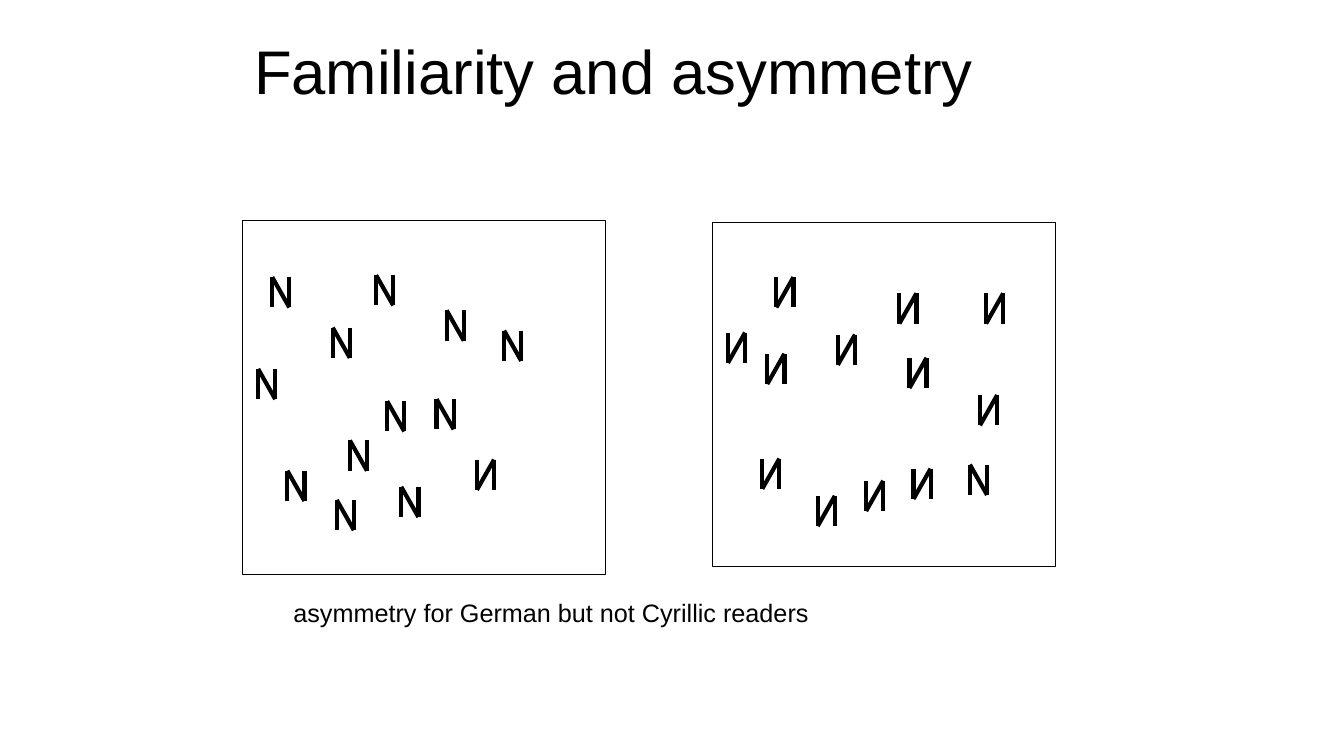
import dataclasses

import lxml.etree
import pptx
import pptx.dml.color
import pptx.enum.shapes
import pptx.enum.text
import pptx.oxml.ns
import pptx.shapes.shapetree
import pptx.slide
import pptx.text.text
import pptx.util

BLACK = pptx.dml.color.RGBColor(0x00, 0x00, 0x00)
WHITE = pptx.dml.color.RGBColor(0xFF, 0xFF, 0xFF)
FONT = "Arial"
WIDE, HIGH = 17, 30


@dataclasses.dataclass(frozen=True)
class Box:
    left: int
    top: int
    width: int
    height: int


@dataclasses.dataclass(frozen=True)
class Glyph:
    left: int
    top: int
    flipped: bool


@dataclasses.dataclass(frozen=True)
class Panel:
    frame: Box
    flipped: bool
    odd: tuple[int, int]
    others: tuple[tuple[int, int], ...]


PANELS = (
    Panel(
        Box(241, 219, 360, 351),
        False,
        (473, 456),
        (
            (270, 275), (330, 325), (334, 496), (256, 366),
            (373, 273), (398, 483), (433, 396), (443, 308),
            (347, 437), (384, 398), (285, 467), (500, 328),
        ),
    ),
    Panel(
        Box(707, 221, 340, 341),
        True,
        (962, 461),
        (
            (770, 275), (831, 332), (811, 492), (892, 291),
            (906, 465), (972, 392), (722, 330), (761, 351),
            (756, 455), (978, 291), (859, 477), (902, 355),
        ),
    ),
)


def px(count: int) -> pptx.util.Emu:
    return pptx.util.Emu(count * 9144)


def place(box: Box) -> tuple[pptx.util.Emu, ...]:
    return px(box.left), px(box.top), px(box.width), px(box.height)


def style(para: pptx.text.text._Paragraph, size: int) -> None:
    para.alignment = pptx.enum.text.PP_ALIGN.LEFT
    para.font.name = FONT
    para.font.size = pptx.util.Pt(size)
    para.font.color.rgb = BLACK


def draw_title(slide: pptx.slide.Slide, box: Box, text: str) -> None:
    title = slide.shapes.title
    title.left, title.top, title.width, title.height = place(box)
    title.text_frame.text = text
    title.text_frame.vertical_anchor = pptx.enum.text.MSO_ANCHOR.MIDDLE
    para = title.text_frame.paragraphs[0]
    para.line_spacing = 0.9
    style(para, 44)


def draw_note(slide: pptx.slide.Slide, box: Box, text: str) -> None:
    frame = slide.shapes.add_textbox(*place(box)).text_frame
    frame.word_wrap = True
    frame.margin_left = px(93)
    frame.text = text
    style(frame.paragraphs[0], 18)


def draw_frame(slide: pptx.slide.Slide, box: Box) -> None:
    shape = slide.shapes.add_shape(
        pptx.enum.shapes.MSO_SHAPE.RECTANGLE, *place(box)
    )
    shape.shadow.inherit = False
    shape.fill.solid()
    shape.fill.fore_color.rgb = WHITE
    shape.line.color.rgb = BLACK
    shape.line.width = pptx.util.Pt(0.75)


def draw_stroke(
    shapes: pptx.shapes.shapetree.GroupShapes,
    start: tuple[int, int],
    end: tuple[int, int],
) -> None:
    stroke = shapes.add_connector(
        pptx.enum.shapes.MSO_CONNECTOR.STRAIGHT,
        *map(px, start + end),
    )
    stroke.line.color.rgb = BLACK
    stroke.line.width = pptx.util.Pt(3)
    lxml.etree.SubElement(
        stroke._element.spPr, pptx.oxml.ns.qn("a:effectLst")
    )


def draw_glyph(slide: pptx.slide.Slide, glyph: Glyph) -> None:
    shapes = slide.shapes.add_group_shape().shapes
    near, far = glyph.left, glyph.left + WIDE
    if glyph.flipped:
        near, far = far, near
    base = glyph.top + HIGH
    for start, end in ((near, near), (far, far), (near, far)):
        draw_stroke(shapes, (start, glyph.top), (end, base))


def draw_panel(slide: pptx.slide.Slide, panel: Panel) -> None:
    for spot in panel.others:
        draw_glyph(slide, Glyph(*spot, panel.flipped))
    draw_glyph(slide, Glyph(*panel.odd, not panel.flipped))


def main() -> None:
    deck = pptx.Presentation()
    deck.slide_width, deck.slide_height = px(1333), px(750)
    slide = deck.slides.add_slide(deck.slide_layouts[5])
    draw_title(slide, Box(242, 31, 850, 85), "Familiarity and asymmetry")
    for panel in PANELS:
        draw_frame(slide, panel.frame)
    for panel in PANELS:
        draw_panel(slide, panel)
    draw_note(
        slide,
        Box(198, 588, 969, 137),
        "asymmetry for German but not Cyrillic readers",
    )
    deck.save("out.pptx")


if __name__ == "__main__":
    main()
